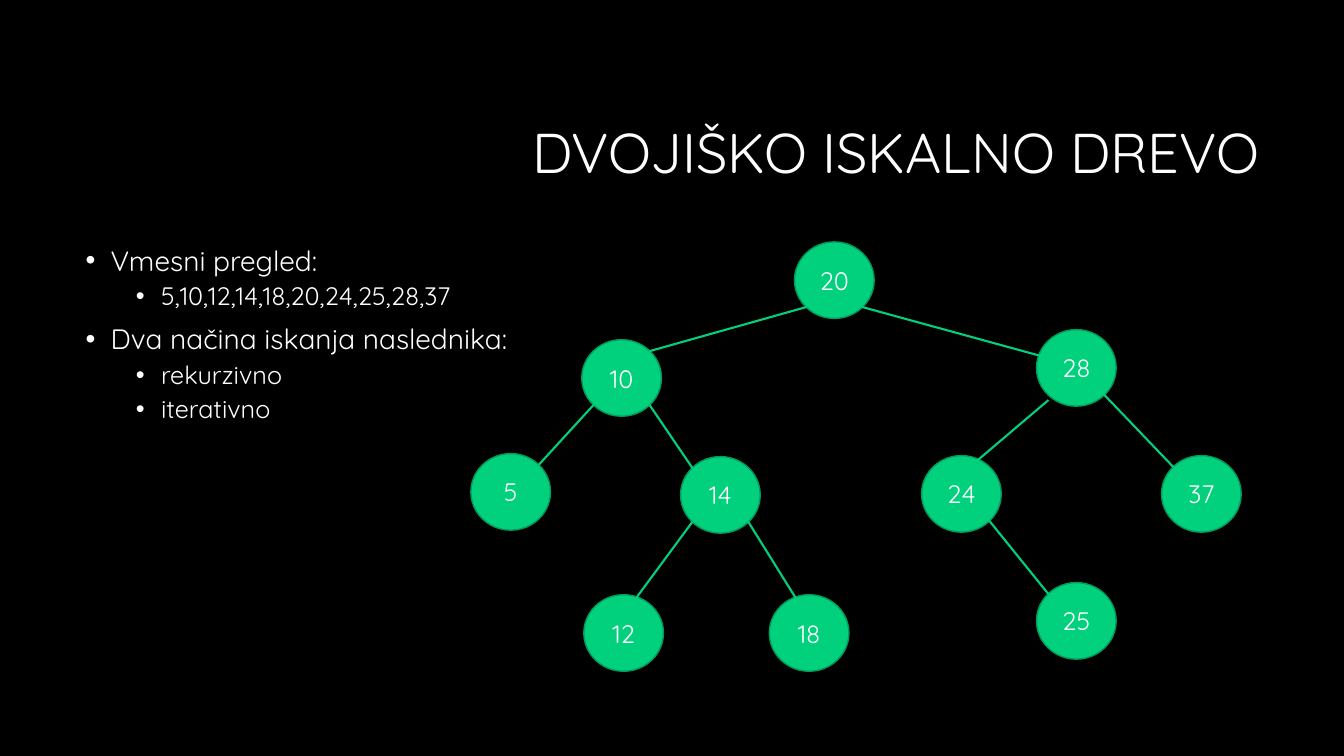
from lxml import etree
from pptx import Presentation
from pptx import util as u
from pptx.dml.color import RGBColor
from pptx.enum import shapes, text
from pptx.oxml.ns import qn

TITLE = "DVOJIŠKO ISKALNO DREVO"
OUTLINE = [
    (0, "Vmesni pregled:"),
    (1, "5,10,12,14,18,20,24,25,28,37"),
    (0, "Dva načina iskanja naslednika:"),
    (1, "rekurzivno"),
    (1, "iterativno"),
]
LEVELS = [
    {"size": 20, "before": 10, "margin": 0.25},
    {"size": 18, "before": 5, "margin": 0.75},
]
NODES = {
    20: (7.88, 2.4), 28: (10.28, 3.27), 10: (5.77, 3.37), 5: (4.67, 4.5),
    14: (6.75, 4.53), 12: (5.79, 5.9), 18: (7.63, 5.9), 24: (9.14, 4.52),
    37: (11.52, 4.52), 25: (10.28, 5.78),
}
NW, NE, SW, SE = (0.15, 0.15), (0.85, 0.15), (0.15, 0.85), (0.85, 0.85)
EDGES = [
    (20, SW, 10, NE),
    (20, SE, 28, (0.04, 0.34)),
    (10, SW, 5, NE),
    (10, SE, 14, NW),
    (14, SW, 12, (0.66, 0.04)),
    (14, SE, 18, (0.33, 0.04)),
    (28, (0.15, 0.92), 24, (0.66, 0.1)),
    (28, SE, 37, NW),
    (24, SE, 25, NW),
]
NODE_W, NODE_H = 0.79, 0.76
FONT = "Quicksand"
COLORS = {name: RGBColor.from_string(code) for name, code in {
    "background": "000000", "text": "FFFFFF",
    "node": "01D17D", "rim": "019B5C"}.items()}


def inches(*lengths):
    return [u.Inches(length) for length in lengths]


def style(paragraph, size, align):
    paragraph.alignment = align
    for run in paragraph.runs:
        run.font.name = FONT
        run.font.size = u.Pt(size)
        run.font.color.rgb = COLORS["text"]


def add_bullet(paragraph, margin):
    properties = paragraph._p.get_or_add_pPr()
    properties.set("marL", str(u.Inches(margin)))
    properties.set("indent", str(u.Inches(-0.25)))
    etree.SubElement(properties, qn("a:buFont")).set("typeface", "Arial")
    etree.SubElement(properties, qn("a:buChar")).set("char", "•")


def point_on(node, share):
    left, top = NODES[node]
    return left + share[0] * NODE_W, top + share[1] * NODE_H


deck = Presentation()
deck.slide_width, deck.slide_height = inches(13.33, 7.5)
slide = deck.slides.add_slide(deck.slide_layouts[5])
slide.background.fill.solid()
slide.background.fill.fore_color.rgb = COLORS["background"]

heading = slide.shapes.title
heading.left, heading.top, heading.width, heading.height = inches(3.17, 0.84, 9.42, 1.41)
heading.text_frame.text = TITLE
heading.text_frame.vertical_anchor = text.MSO_ANCHOR.MIDDLE
heading.text_frame.paragraphs[0].line_spacing = 0.9
style(heading.text_frame.paragraphs[0], 40, text.PP_ALIGN.RIGHT)

outline = slide.shapes.add_textbox(*inches(0.75, 2.4, 11.83, 4.5)).text_frame
outline.word_wrap = True
outline.text = "\n".join(line for _, line in OUTLINE)
for index, (paragraph, (depth, _)) in enumerate(zip(outline.paragraphs, OUTLINE)):
    level = LEVELS[depth]
    add_bullet(paragraph, level["margin"])
    paragraph.level = depth
    paragraph.line_spacing = 0.9
    paragraph.space_before = u.Pt(level["before"] if index else 0)
    style(paragraph, level["size"], text.PP_ALIGN.LEFT)

for value, corner in NODES.items():
    node = slide.shapes.add_shape(
        shapes.MSO_SHAPE.FLOWCHART_CONNECTOR, *inches(*corner, NODE_W, NODE_H))
    node.shadow.inherit = False
    node.fill.solid()
    node.fill.fore_color.rgb = COLORS["node"]
    node.line.color.rgb = COLORS["rim"]
    node.line.width = u.Pt(1)
    node.text_frame.text = str(value)
    node.text_frame.vertical_anchor = text.MSO_ANCHOR.MIDDLE
    style(node.text_frame.paragraphs[0], 18, text.PP_ALIGN.CENTER)

for parent, leaving, child, arriving in EDGES:
    edge = slide.shapes.add_connector(
        shapes.MSO_CONNECTOR.STRAIGHT,
        *inches(*point_on(parent, leaving), *point_on(child, arriving)))
    edge.line.color.rgb = COLORS["node"]
    edge.line.width = u.Pt(1.5)
    etree.SubElement(edge._element.spPr, qn("a:effectLst"))

deck.save("out.pptx")
